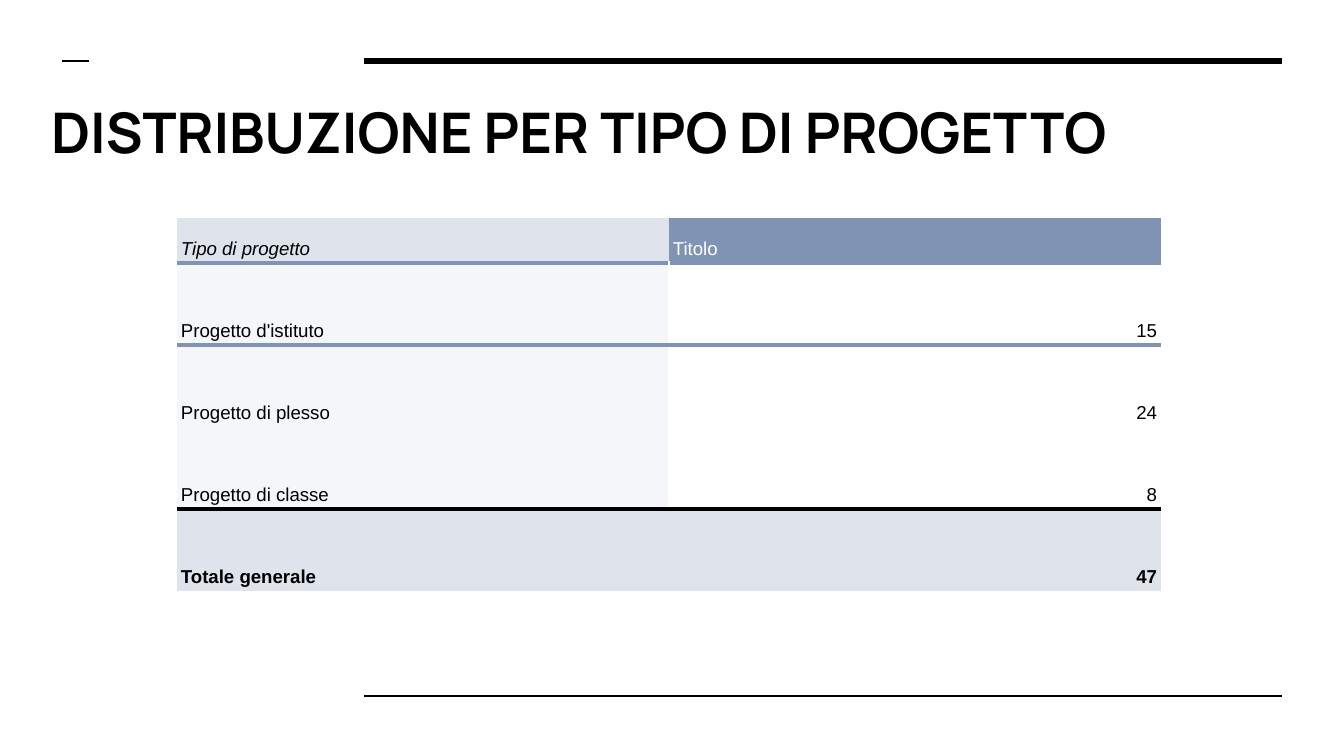
from dataclasses import dataclass

from lxml.etree import SubElement
from pptx import Presentation
from pptx.dml.color import RGBColor
from pptx.enum.shapes import MSO_CONNECTOR
from pptx.enum.text import MSO_ANCHOR, PP_ALIGN
from pptx.oxml.ns import qn
from pptx.util import Pt

SCALE = 914400 / 134.4


def px(length):
    """Turn whole pixels into EMU."""
    return round(length * SCALE)


@dataclass(frozen=True)
class Theme:
    """Colours, fonts and sizes of the slide."""

    ink: str = "000000"
    paper: str = "FFFFFF"
    accent: str = "8093B3"
    tint: str = "DFE4EC"
    label: str = "F4F6F8"
    title_font: str = "Manrope"
    body_font: str = "Arial"
    title_size: int = 30
    body_size: int = 10
    thick: float = 3
    rule: float = 1.5
    border: float = 2.25
    hairline: float = 0.75


class Page:
    """Hold the theme and the current slide."""

    def __init__(self, deck, theme):
        """Add a title-only slide to the deck."""
        self.theme = theme
        self.slide = deck.slides.add_slide(deck.slide_layouts[5])

    def style(self, para, font, size, color, bold=False, italic=False):
        """Format every run of a paragraph."""
        for span in para.runs:
            span.font.name = font
            span.font.size = Pt(size)
            span.font.color.rgb = RGBColor.from_string(color)
            span.font.bold = bold
            span.font.italic = italic

    def rule(self, left, right, y, width):
        """Draw a horizontal rule."""
        line = self.slide.shapes.add_connector(
            MSO_CONNECTOR.STRAIGHT, px(left), px(y), px(right), px(y))
        line.line.color.rgb = RGBColor.from_string(self.theme.ink)
        line.line.width = Pt(width)
        SubElement(line._element.spPr, qn("a:effectLst"))

    def title(self, text, left, top, width, height):
        """Place and format the title."""
        box = self.slide.shapes.title
        box.left, box.top, box.width, box.height = map(px, (left, top, width, height))
        frame = box.text_frame
        frame.text = text
        frame.word_wrap = True
        frame.vertical_anchor = MSO_ANCHOR.MIDDLE
        frame.margin_left = frame.margin_right = px(13)
        frame.margin_top = frame.margin_bottom = px(13)
        para = frame.paragraphs[0]
        para.alignment = PP_ALIGN.LEFT
        self.style(para, self.theme.title_font, self.theme.title_size, self.theme.ink, bold=True)

    def borders(self, cell, edges):
        """Set all four borders of a cell, hiding those not given."""
        properties = cell._tc.get_or_add_tcPr()
        for side in "LRTB":
            line = SubElement(properties, qn(f"a:ln{side}"))
            if side in edges:
                color, width = edges[side]
                line.set("w", str(Pt(width)))
                fill = SubElement(line, qn("a:solidFill"))
                SubElement(fill, qn("a:srgbClr")).set("val", color)
            else:
                SubElement(line, qn("a:noFill"))

    def cell(self, cell, text, fill, color, edges, align, bold=False, italic=False):
        """Fill in one table cell."""
        self.borders(cell, edges)
        cell.fill.solid()
        cell.fill.fore_color.rgb = RGBColor.from_string(fill)
        cell.vertical_anchor = MSO_ANCHOR.BOTTOM
        cell.margin_left = cell.margin_right = px(4)
        cell.margin_top = cell.margin_bottom = px(3)
        cell.text_frame.text = text
        para = cell.text_frame.paragraphs[0]
        para.alignment = align
        para.line_spacing = 1.15
        self.style(para, self.theme.body_font, self.theme.body_size, color, bold, italic)

    def table(self, rows, left, top, column_width, row_heights):
        """Draw a table with a header row and a total row."""
        theme = self.theme
        total = len(rows) - 1
        table = self.slide.shapes.add_table(
            len(rows), 2, px(left), px(top), px(2 * column_width), px(sum(row_heights))).table
        table.first_row = table.horz_banding = False
        for column in table.columns:
            column.width = px(column_width)
        accent, closing = (theme.accent, theme.border), (theme.ink, theme.border)
        rules = {0: accent, 1: accent, total - 1: closing}
        fills = {0: (theme.tint, theme.accent), total: (theme.tint, theme.tint)}
        for r, (row, height) in enumerate(zip(rows, row_heights)):
            table.rows[r].height = px(height)
            for c, text in enumerate(row):
                edges = {side: rules[index] for side, index in (("T", r - 1), ("B", r))
                         if index in rules}
                if 0 < r < total:
                    edges["LR"[1 - c]] = (theme.paper, theme.hairline)
                self.cell(
                    table.cell(r, c), text,
                    fill=fills.get(r, (theme.label, theme.paper))[c],
                    color=theme.paper if (r, c) == (0, 1) else theme.ink,
                    edges=edges,
                    align=PP_ALIGN.RIGHT if r and c else PP_ALIGN.LEFT,
                    bold=r == total, italic=(r, c) == (0, 0))


def main():
    """Build the slide and save it."""
    deck = Presentation()
    deck.slide_width, deck.slide_height = px(1344), px(756)
    theme = Theme()
    page = Page(deck, theme)
    page.rule(364, 1282, 61, theme.thick)
    page.rule(364, 1282, 696, theme.rule)
    page.rule(62, 89, 61, theme.rule)
    page.title("DISTRIBUZIONE PER TIPO DI PROGETTO", 38, 85, 1244, 92)
    rows = [
        ("Tipo di progetto", "Titolo"),
        ("Progetto d'istituto", "15"),
        ("Progetto di plesso", "24"),
        ("Progetto di classe", "8"),
        ("Totale generale", "47"),
    ]
    page.table(rows, 177, 218, 492, [45] + [82] * 4)
    deck.save("out.pptx")


if __name__ == "__main__":
    main()
